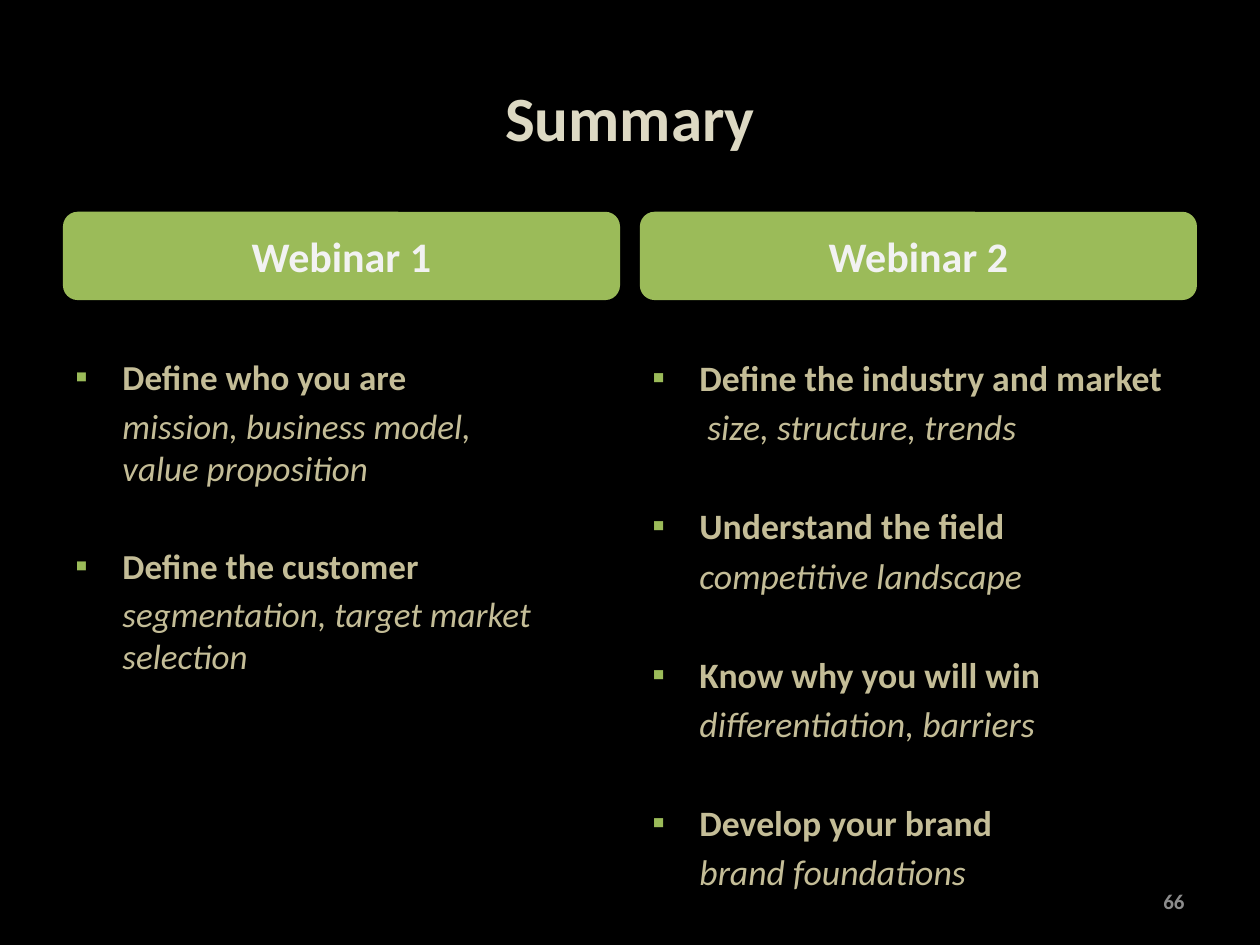
import lxml.etree
import pptx
import pptx.dml.color
import pptx.enum.shapes
import pptx.enum.text
import pptx.oxml.ns
import pptx.util

Cm = pptx.util.Cm
Pt = pptx.util.Pt
RGBColor = pptx.dml.color.RGBColor
ALIGN = pptx.enum.text.PP_ALIGN
MIDDLE = pptx.enum.text.MSO_ANCHOR.MIDDLE

BLACK = RGBColor(0x00, 0x00, 0x00)
CREAM = RGBColor(0xDD, 0xD9, 0xC3)
TAN = RGBColor(0xC4, 0xBD, 0x97)
GREEN = RGBColor(0x9B, 0xBB, 0x59)
WHITE = RGBColor(0xF2, 0xF2, 0xF2)
GREY = RGBColor(0x8C, 0x8C, 0x8C)

FONT = "Calibri"
MARGIN = Cm(1.27)
HEADER_TOP = Cm(4.27)
HEADER_HEIGHT = Cm(1.78)
COLUMN_WIDTH = Cm(11.23)
INDENT = Cm(0.95)

# Heading, text width, text size, and (topic, details, extra indent) entries
COLUMNS = [
    ("Webinar 1", Cm(9.96), Pt(20), [
        ("Define who you are", "mission, business model, value proposition", 0),
        ("Define the customer", "segmentation, target market selection", 0),
    ]),
    ("Webinar 2", COLUMN_WIDTH, Pt(20.4), [
        ("Define the industry and market", "size, structure, trends", Cm(0.16)),
        ("Understand the field", "competitive landscape", 0),
        ("Know why you will win", "differentiation, barriers", 0),
        ("Develop your brand", "brand foundations", 0),
    ]),
]


def write(para, text, size, color, bold=True, italic=False):
    para.text = text
    for span in para.runs:
        font = span.font
        font.name, font.size = FONT, size
        font.bold, font.italic = bold, italic
        font.color.rgb = color


def set_indent(para, margin, first_line):
    properties = para._p.get_or_add_pPr()
    properties.set("marL", str(int(margin)))
    properties.set("indent", str(int(first_line)))
    return properties


def add_bullet(para):
    properties = set_indent(para, INDENT, -INDENT)
    qn = pptx.oxml.ns.qn
    color = lxml.etree.SubElement(properties, qn("a:buClr"))
    lxml.etree.SubElement(color, qn("a:srgbClr"), val=str(GREEN))
    lxml.etree.SubElement(properties, qn("a:buFont"), typeface=FONT)
    lxml.etree.SubElement(properties, qn("a:buChar"), char="▪")


def place_title(page, left, top, width, height):
    title = page.shapes.title
    title.left, title.top, title.width, title.height = left, top, width, height
    title.text_frame.vertical_anchor = MIDDLE
    para = title.text_frame.paragraphs[0]
    write(para, "Summary", Pt(36), CREAM)
    para.alignment = ALIGN.CENTER


def add_header(page, text, left, top, width, height):
    header = page.shapes.add_shape(
        pptx.enum.shapes.MSO_SHAPE.ROUNDED_RECTANGLE, left, top, width, height)
    header.shadow.inherit = False
    header.fill.solid()
    header.fill.fore_color.rgb = GREEN
    header.line.fill.background()
    header.text_frame.vertical_anchor = MIDDLE
    para = header.text_frame.paragraphs[0]
    write(para, text, Pt(24), WHITE)
    para.alignment = ALIGN.CENTER


def add_topics(page, entries, size, left, top, width, height):
    box = page.shapes.add_textbox(left, top, width, height)
    frame = box.text_frame
    frame.word_wrap = True
    for index, (topic, details, extra) in enumerate(entries):
        para = frame.add_paragraph() if index else frame.paragraphs[0]
        if index:
            para.space_before = Pt(32)
        add_bullet(para)
        write(para, topic, size, TAN)

        para = frame.add_paragraph()
        para.space_before = Pt(3.7)
        set_indent(para, INDENT + extra, 0)
        write(para, details, size, TAN, bold=False, italic=True)


def add_column(page, column, left, top, width):
    heading, text_width, size, entries = column
    add_header(page, heading, left, top, width, HEADER_HEIGHT)
    add_topics(page, entries, size, left, top + HEADER_HEIGHT + Cm(1),
               text_width, Cm(10.2))


def add_page_number(page, left, top, width, height):
    box = page.shapes.add_textbox(left, top, width, height)
    box.text_frame.word_wrap = True
    box.text_frame.vertical_anchor = MIDDLE
    para = box.text_frame.paragraphs[0]
    write(para, "66", Pt(12), GREY)
    para.alignment = ALIGN.RIGHT


def main():
    deck = pptx.Presentation()
    deck.slide_width, deck.slide_height = Cm(25.4), Cm(19.05)
    page = deck.slides.add_slide(deck.slide_layouts[5])
    page.background.fill.solid()
    page.background.fill.fore_color.rgb = BLACK

    content_width = deck.slide_width - 2 * MARGIN
    place_title(page, MARGIN, Cm(0.76), content_width, Cm(3.18))
    step = content_width - COLUMN_WIDTH
    for index, column in enumerate(COLUMNS):
        add_column(page, column, MARGIN + index * step, HEADER_TOP, COLUMN_WIDTH)
    number_width = Cm(5.93)
    add_page_number(page, deck.slide_width - MARGIN - number_width, Cm(17.66),
                    number_width, Cm(1.01))
    deck.save("out.pptx")


if __name__ == "__main__":
    main()
